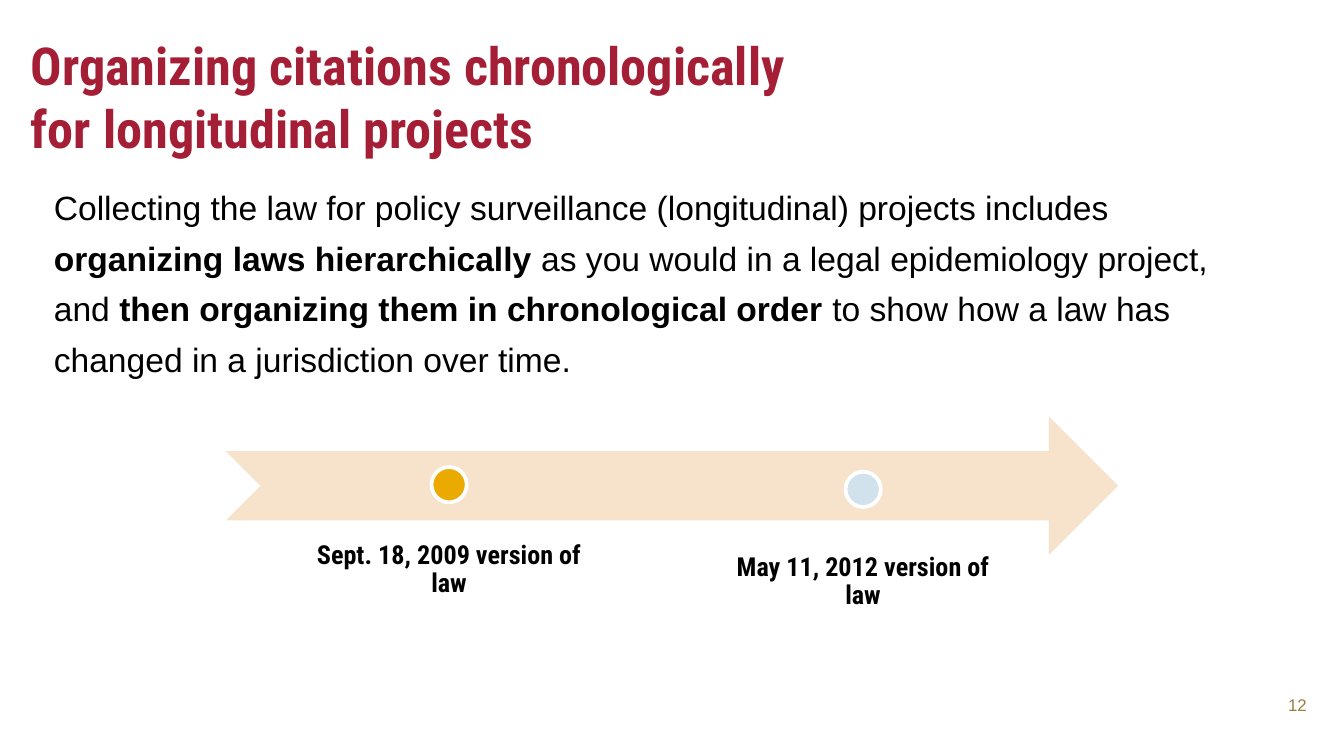
from dataclasses import dataclass

from pptx import Presentation
from pptx.dml.color import RGBColor
from pptx.enum.shapes import MSO_SHAPE as Preset
from pptx.enum.text import MSO_ANCHOR as Anchor, PP_ALIGN as Align
from pptx.util import Pt


@dataclass(frozen=True)
class Theme:
    """Colours, fonts and type sizes of the slide."""
    crimson: str = "A41E35"
    black: str = "000000"
    bronze: str = "9A7E40"
    sand: str = "F7E2CC"
    gold: str = "EAAA00"
    sky: str = "D1E2EC"
    white: str = "FFFFFF"
    heading_font: str = "Roboto Condensed"
    body_font: str = "Arial"
    title_size: int = 28
    body_size: int = 18
    label_size: int = 14
    number_size: int = 9


THEME = Theme()


def apply(target, values):
    """Set each attribute in values on the target."""
    for name, value in values.items():
        setattr(target, name, value)


def add_text(slide, box, lines, size, color, font, frame_format=None, paragraph_format=None):
    """Write lines of (text, bold) runs as one paragraph in a text box."""
    frame = slide.shapes.add_textbox(*map(Pt, box)).text_frame
    margins = {f"margin_{side}": Pt(7.2) for side in ("left", "top", "right", "bottom")}
    apply(frame, {"word_wrap": True, "vertical_anchor": Anchor.TOP, **margins, **(frame_format or {})})
    paragraph = frame.paragraphs[0]
    apply(paragraph, paragraph_format or {})
    for index, line in enumerate(lines):
        if index:
            paragraph.add_line_break()
        for text, bold in line:
            run = paragraph.add_run()
            run.text = text
            apply(run.font, {"size": Pt(size), "name": font, "bold": bold})
            run.font.color.rgb = RGBColor.from_string(color)


def add_preset(slide, preset, box, fill, outline=None):
    """Draw a filled preset shape, outlined only when a colour is given."""
    shape = slide.shapes.add_shape(preset, *map(Pt, box))
    shape.shadow.inherit = False
    shape.fill.solid()
    shape.fill.fore_color.rgb = RGBColor.from_string(fill)
    if outline:
        shape.line.color.rgb = RGBColor.from_string(outline)
        shape.line.width = Pt(2)
    else:
        shape.line.fill.background()


def add_title(slide, box):
    """Place the two-line title."""
    lines = [[("Organizing citations chronologically", True)], [("for longitudinal projects", True)]]
    add_text(slide, box, lines, THEME.title_size, THEME.crimson, THEME.heading_font)


def add_body(slide, box):
    """Place the explanation with its key phrases in bold."""
    runs = [
        ("Collecting the law for policy surveillance (longitudinal) projects includes ", False),
        ("organizing laws hierarchically", True),
        (" as you would in a legal epidemiology project, and ", False),
        ("then organizing them in chronological order ", True),
        ("to show how a law has changed in a jurisdiction over time.", False),
    ]
    add_text(slide, box, [runs], THEME.body_size, THEME.black, THEME.body_font,
             {"margin_left": Pt(15.84)}, {"line_spacing": 1.25})


def add_timeline(slide, box):
    """Place the arrow with a dot and a label for each version of the law."""
    left, top, width, height = box
    dot, label_width = 18.9, 170.7
    milestones = [
        ("Sept. 18, 2009 version of law", 119.6, 27, THEME.gold, 47.5, 63.4, Anchor.BOTTOM),
        ("May 11, 2012 version of law", 341.4, 29.5, THEME.sky, 59.8, 41.8, Anchor.TOP),
    ]
    add_preset(slide, Preset.NOTCHED_RIGHT_ARROW, box, THEME.sand)
    insets = {f"margin_{side}": Pt(13.5) for side in ("left", "top", "right", "bottom")}
    for text, center, dot_top, color, label_top, label_height, anchor in milestones:
        label_box = (left + center - label_width / 2, top + label_top, label_width, label_height)
        add_text(slide, label_box, [[(text, True)]], THEME.label_size, THEME.black, THEME.heading_font,
                 {**insets, "vertical_anchor": anchor}, {"alignment": Align.CENTER, "line_spacing": 0.9})
        dot_box = (left + center - dot / 2, top + dot_top, dot, dot)
        add_preset(slide, Preset.OVAL, dot_box, color, THEME.white)


def add_page_number(slide, box):
    """Place the page number."""
    add_text(slide, box, [[("12", False)]], THEME.number_size, THEME.bronze, THEME.body_font,
             paragraph_format={"alignment": Align.RIGHT})


def main():
    """Build and save the slide."""
    deck = Presentation()
    apply(deck, {"slide_width": Pt(720), "slide_height": Pt(405)})
    slide = deck.slides.add_slide(deck.slide_layouts[6])
    add_page_number(slide, (675.4, 366.5, 31.7, 26.6))
    add_title(slide, (9.4, 10.8, 659.5, 45.4))
    add_body(slide, (13, 87.8, 671, 285.1))
    add_timeline(slide, (121, 223.2, 478, 74.2))
    deck.save("out.pptx")


if __name__ == "__main__":
    main()
